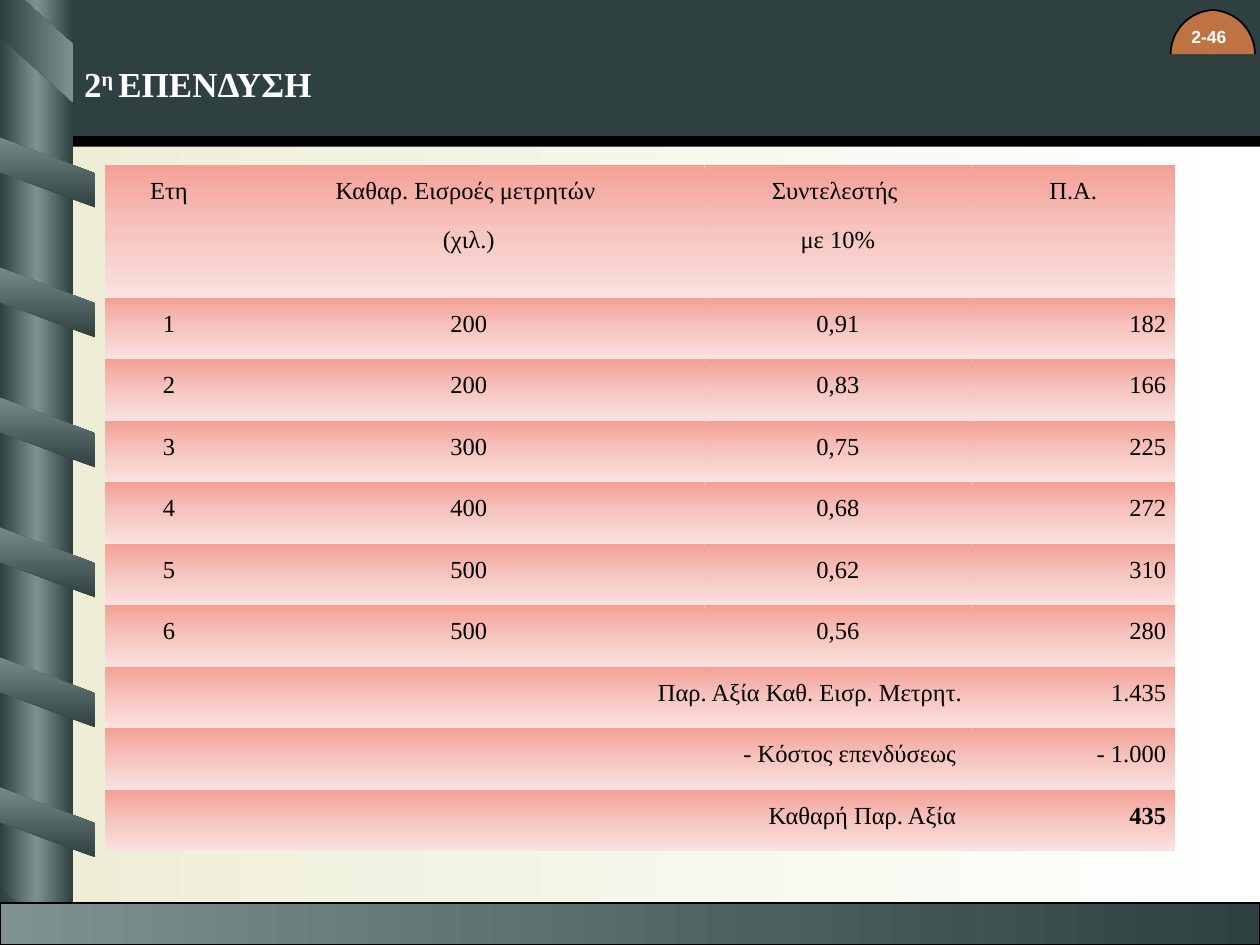
import pptx
import pptx.oxml
import pptx.util
from pptx.dml.color import RGBColor
from pptx.enum.shapes import MSO_SHAPE
from pptx.enum.text import MSO_ANCHOR, PP_ALIGN
from pptx.oxml.ns import nsdecls, qn
from pptx.util import Cm, Pt

BLACK = RGBColor(0x00, 0x00, 0x00)
WHITE = RGBColor(0xFF, 0xFF, 0xFF)
CREAM = RGBColor(0xED, 0xED, 0xD5)
DARK = RGBColor(0x2F, 0x40, 0x40)
GREY = RGBColor(0x80, 0x91, 0x91)
COPPER = RGBColor(0xBF, 0x73, 0x43)
SALMON = RGBColor(0xF4, 0xA0, 0x95)
PINK = RGBColor(0xF6, 0xC5, 0xBF)
PALE = RGBColor(0xFA, 0xE2, 0xE0)

SERIF, SANS = "Times New Roman", "Arial"
PLAIN_TABLE_STYLE = "{2D5ABB26-0587-4C30-8999-92F81FD0307C}"

SLIDE_W, SLIDE_H = 25.4, 19.05
COLUMN_W, HEADER_H = 1.47, 2.74

TITLE = [(" ", 0), ("2", 0), ("η ", 30000), ("ΕΠΕΝΔΥΣΗ", 0)]
PAGE_NUMBER = "2-46"

HEADINGS = ["Ετη", "Καθαρ. Εισροές μετρητών \n(χιλ.)", "Συντελεστής \nμε 10%", "Π.Α."]
YEARS = [
    ("1", "200", "0,91", "182"),
    ("2", "200", "0,83", "166"),
    ("3", "300", "0,75", "225"),
    ("4", "400", "0,68", "272"),
    ("5", "500", "0,62", "310"),
    ("6", "500", "0,56", "280"),
]
TOTALS = [
    ("Παρ. Αξία Καθ. Εισρ. Μετρητ.", "1.435"),
    ("- Κόστος επενδύσεως ", "- 1.000"),
    ("Καθαρή Παρ. Αξία ", "435"),
]
TABLE_LEFT, TABLE_TOP = 2.11, 3.33
COLUMN_WIDTHS = [2.59, 9.5, 5.38, 4.11]
HEADING_H, ROW_H = 2.67, 1.24

BAND_COUNT, BAND_FIRST_Y, BAND_PITCH = 6, 3.4, 2.62
BAND_CENTRE_X, BAND_H, BAND_W = 0.74, 1.57, 2.36
CORNERS = [
    [(0, 0), (0, 0.74), (1.47, 2.06), (1.47, 0.89), (0.48, 0)],
    [(1.27, 19.02), (0, 17.91), (0, 19.05)],
]


def fill_gradient(owner, element, colors, angle=0):
    """Fill owner (whose XML is element) with evenly spaced colour stops."""
    owner.fill.background()
    last = len(colors) - 1
    stops = "".join(
        f'<a:gs pos="{100000 * i // last}"><a:srgbClr val="{color}"/></a:gs>'
        for i, color in enumerate(colors)
    )
    gradient = pptx.oxml.parse_xml(
        f'<a:gradFill rotWithShape="1" {nsdecls("a")}><a:gsLst>{stops}</a:gsLst>'
        f'<a:lin ang="{angle * 60000}" scaled="0"/></a:gradFill>'
    )
    empty = element.find(".//" + qn("a:noFill"))
    empty.getparent().replace(empty, gradient)


def paint(shape, colors, outlined=False):
    shape.shadow.inherit = False
    if len(colors) == 1:
        shape.fill.solid()
        shape.fill.fore_color.rgb = colors[0]
    else:
        fill_gradient(shape, shape.element, colors)
    if outlined:
        shape.line.color.rgb = BLACK
        shape.line.width = Pt(1)
    else:
        shape.line.fill.background()


def add_painted(page, kind, left, top, width, height, colors, outlined=False):
    shape = page.shapes.add_shape(kind, Cm(left), Cm(top), Cm(width), Cm(height))
    paint(shape, colors, outlined)
    return shape


def style_font(span, name, size, color, bold=False):
    span.font.name = name
    span.font.size = Pt(size)
    span.font.color.rgb = color
    span.font.bold = bold


def add_frame(page):
    """Draw the header, the twisted column on the left and the bottom bar."""
    box = MSO_SHAPE.RECTANGLE
    right_w = SLIDE_W - COLUMN_W
    add_painted(page, box, COLUMN_W, HEADER_H, right_w, 0.22, [BLACK])
    add_painted(page, box, 0, 0, COLUMN_W, SLIDE_H, [DARK, GREY, DARK])
    add_painted(page, box, COLUMN_W, 0, right_w, HEADER_H, [DARK])
    for i in range(BAND_COUNT):
        centre_y = BAND_FIRST_Y + i * BAND_PITCH
        band = add_painted(page, MSO_SHAPE.PARALLELOGRAM, BAND_CENTRE_X - BAND_H / 2,
                           centre_y - BAND_W / 2, BAND_H, BAND_W, [DARK, GREY])
        band.rotation = 270
        band.adjustments[0] = 0.56
    for corner in CORNERS:
        points = [(Cm(x), Cm(y)) for x, y in corner]
        builder = page.shapes.build_freeform(*points[0])
        builder.add_line_segments(points[1:], close=True)
        paint(builder.convert_to_shape(), [DARK, GREY])
    add_painted(page, box, 0, 18.21, SLIDE_W, 0.84, [GREY, DARK], outlined=True)


def add_text_box(page, left, top, width, height):
    box = page.shapes.add_textbox(Cm(left), Cm(top), Cm(width), Cm(height))
    box.text_frame.vertical_anchor = MSO_ANCHOR.MIDDLE
    return box.text_frame


def add_page_badge(page):
    for left, mirrored in ((23.5, False), (23.6, True)):
        arc = add_painted(page, MSO_SHAPE.ARC, left, 0.2, 1.8, 1.78, [COPPER], outlined=True)
        if mirrored:
            arc.element.spPr.find(qn("a:xfrm")).set("flipH", "1")
    frame = add_text_box(page, 23.7, 0.2, 1.27, 1.07)
    frame.word_wrap = False
    frame.text = PAGE_NUMBER
    frame.paragraphs[0].alignment = PP_ALIGN.RIGHT
    style_font(frame.paragraphs[0].runs[0], SANS, 10, WHITE, bold=True)


def add_title(page):
    frame = add_text_box(page, 1.27, 1.12, 22.94, 1.12)
    frame.word_wrap = True
    for text, baseline in TITLE:
        span = frame.paragraphs[0].add_run()
        span.text = text
        style_font(span, SERIF, 20, WHITE, bold=True)
        if baseline:
            span.font._element.set("baseline", str(baseline))


def fill_cell(cell, text, alignment, bold=False):
    cell.margin_left = cell.margin_right = Cm(0.18)
    cell.margin_top = cell.margin_bottom = Cm(0.18)
    cell.text_frame.text = text
    for para in cell.text_frame.paragraphs:
        para.alignment = alignment
        para.line_spacing = 1.15
        para.space_after = Pt(10)
        for span in para.runs:
            style_font(span, SERIF, 14, BLACK, bold)


def add_value_table(page):
    row_count = 1 + len(YEARS) + len(TOTALS)
    heights = [HEADING_H] + [ROW_H] * (row_count - 1)
    frame = page.shapes.add_table(row_count, len(COLUMN_WIDTHS), Cm(TABLE_LEFT), Cm(TABLE_TOP),
                                  Cm(sum(COLUMN_WIDTHS)), Cm(sum(heights)))
    table = frame.table
    table.first_row = table.horz_banding = False
    frame.element.find(".//" + qn("a:tableStyleId")).text = PLAIN_TABLE_STYLE
    for column, width in zip(table.columns, COLUMN_WIDTHS):
        column.width = Cm(width)
    for row, height in zip(table.rows, heights):
        row.height = Cm(height)
    for cell in table.iter_cells():
        fill_gradient(cell, cell._tc, [SALMON, PINK, PALE], angle=90)

    last = len(COLUMN_WIDTHS) - 1
    for r, values in enumerate([HEADINGS] + YEARS):
        for c, text in enumerate(values):
            is_amount = r > 0 and c == last
            fill_cell(table.cell(r, c), text, PP_ALIGN.RIGHT if is_amount else PP_ALIGN.CENTER)
    for r, (label, amount) in enumerate(TOTALS, start=1 + len(YEARS)):
        table.cell(r, 0).merge(table.cell(r, last - 1))
        fill_cell(table.cell(r, 0), label, PP_ALIGN.RIGHT)
        fill_cell(table.cell(r, last), amount, PP_ALIGN.RIGHT, bold=r == row_count - 1)


def main():
    deck = pptx.Presentation()
    deck.slide_width, deck.slide_height = Cm(SLIDE_W), Cm(SLIDE_H)
    page = deck.slides.add_slide(deck.slide_layouts[6])
    fill_gradient(page.background, page.element, [CREAM, WHITE])
    add_frame(page)
    add_page_badge(page)
    add_value_table(page)
    add_title(page)
    deck.save("out.pptx")


if __name__ == "__main__":
    main()
